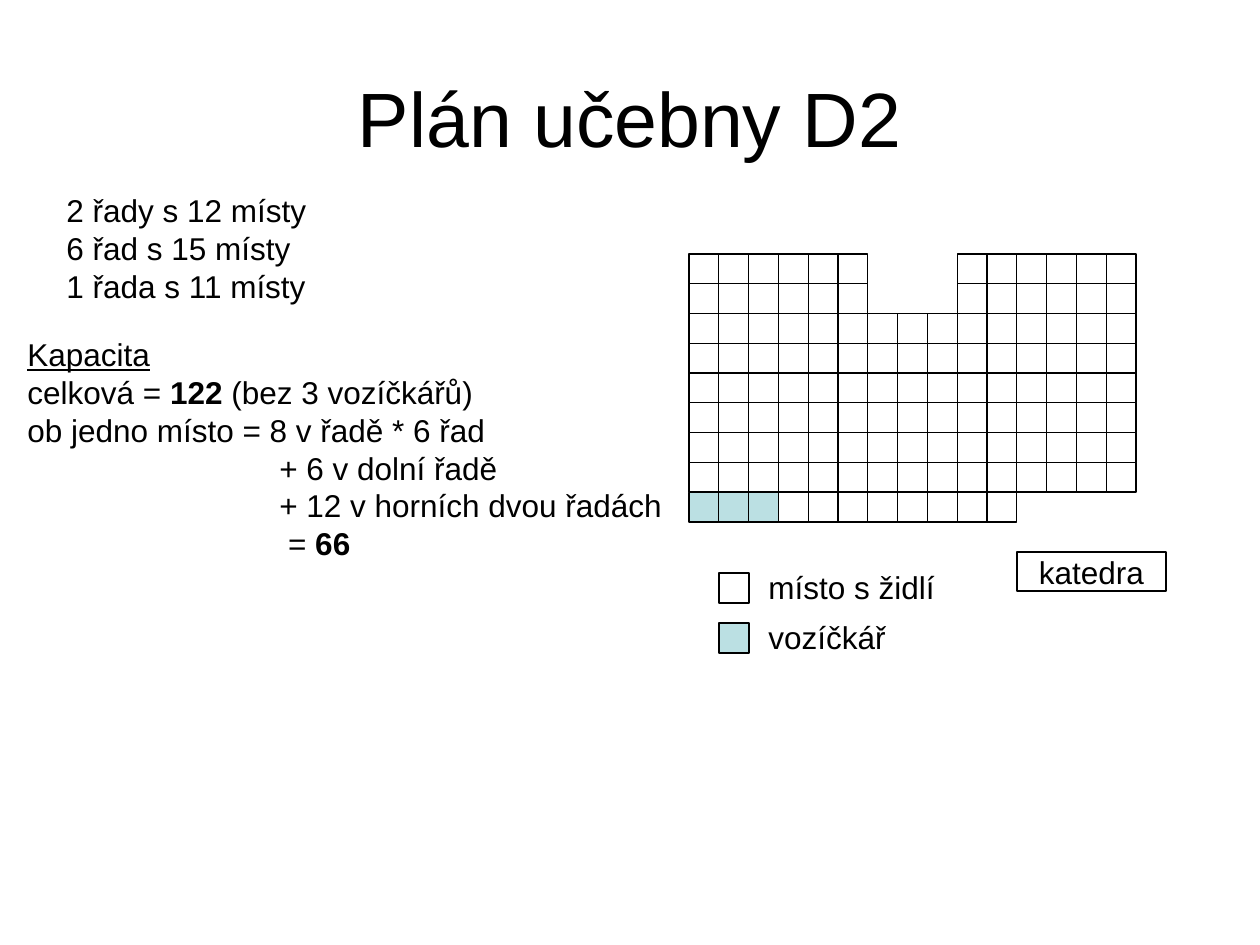
from lxml.etree import SubElement
from pptx import Presentation
from pptx.dml.color import RGBColor
from pptx.enum.shapes import MSO_SHAPE
from pptx.enum.text import MSO_ANCHOR, MSO_AUTO_SIZE, PP_ALIGN
from pptx.oxml.ns import qn
from pptx.util import Emu, Pt

PX = 914400 / 126
COLORS = {"ink": "000000", "chair": None, "wheel": "BBE0E3"}
FONT = "Arial"
COLS = 15
# Runs of places in each row: (first column, count, kind)
ROWS = (
    [[(0, 6, "chair"), (9, 6, "chair")]] * 2
    + [[(0, COLS, "chair")]] * 6
    + [[(0, 3, "wheel"), (3, 8, "chair")]]
)
BREAK = "\n"
TABS = (126, 252)


def px(*vals):
    return [Emu(round(v * PX)) for v in vals]


def add_run(para, text, size=18, bold=False, under=False):
    run = para.add_run()
    run.text = text
    font = run.font
    font.name, font.size = FONT, Pt(size)
    font.bold, font.underline = bold, under
    font.color.rgb = RGBColor.from_string(COLORS["ink"])


def set_tabs(para):
    stops = SubElement(para._p.get_or_add_pPr(), qn("a:tabLst"))
    for pos in px(*TABS):
        SubElement(stops, qn("a:tab"), pos=str(int(pos)), algn="l")


def add_text(shapes, box, paras):
    """Each paragraph is a list of BREAK marks and (text, style) runs."""
    frame = shapes.add_textbox(*px(*box)).text_frame
    frame.word_wrap = False
    frame.auto_size = MSO_AUTO_SIZE.SHAPE_TO_FIT_TEXT
    for i, parts in enumerate(paras):
        para = frame.add_paragraph() if i else frame.paragraphs[0]
        for part in parts:
            if part == BREAK:
                para.add_line_break()
            else:
                add_run(para, part[0], **part[1])
    return frame


def add_box(shapes, box, kind="chair"):
    shape = shapes.add_shape(MSO_SHAPE.RECTANGLE, *px(*box))
    shape.shadow.inherit = False
    if COLORS[kind]:
        shape.fill.solid()
        shape.fill.fore_color.rgb = RGBColor.from_string(COLORS[kind])
    else:
        shape.fill.background()
    shape.line.color.rgb = RGBColor.from_string(COLORS["ink"])
    shape.line.width = Pt(0.75)
    return shape


def set_title(slide, box, text):
    title = slide.shapes.title
    title.left, title.top, title.width, title.height = px(*box)
    frame = title.text_frame
    frame.vertical_anchor = MSO_ANCHOR.MIDDLE
    para = frame.paragraphs[0]
    para.alignment = PP_ALIGN.CENTER
    add_run(para, text, 44)


def add_notes(slide, box):
    """Row counts above, capacity sums below."""
    x, y = box
    add_text(slide.shapes, (x + 39, y, 275, 127), [
        [("2 řady s 12 místy", {}), BREAK, ("6 řad s 15 místy", {})],
        [("1 řada s 11 místy", {})],
    ])
    sums = add_text(slide.shapes, (x, y + 144, 667, 242), [
        [("Kapacita", {"under": True}), BREAK,
         ("celková = ", {}), ("122 ", {"bold": True}),
         ("(bez 3 vozíčkářů)", {})],
        [("ob jedno místo = 8 v řadě * 6 řad ", {}), BREAK,
         ("\t\t+ 6 v dolní řadě", {}), BREAK,
         ("\t\t+ 12 v horních dvou řadách", {}), BREAK,
         ("\t\t = ", {}), ("66", {"bold": True})],
    ])
    set_tabs(sums.paragraphs[1])


def add_seats(shapes, box):
    x, y, w, h = box
    cw, ch = w / COLS, h / len(ROWS)
    for row, spans in enumerate(ROWS):
        for first, count, kind in spans:
            for col in range(first, first + count):
                add_box(shapes, (x + col * cw, y + row * ch, cw, ch), kind)


def add_desk(shapes, box):
    frame = add_box(shapes, box).text_frame
    frame.word_wrap = False
    frame.vertical_anchor = MSO_ANCHOR.MIDDLE
    para = frame.paragraphs[0]
    para.alignment = PP_ALIGN.CENTER
    add_run(para, "katedra")


def add_legend(shapes, box):
    x, y = box
    items = [("chair", "místo s židlí", 194), ("wheel", "vozíčkář", 148)]
    for i, (kind, label, width) in enumerate(items):
        top = y + i * 50
        add_box(shapes, (x, top + 11, 30, 30), kind)
        add_text(shapes, (x + 37, top, width, 50), [[(label, {})]])


def main():
    prs = Presentation()
    prs.slide_width, prs.slide_height = px(1260, 945)
    slide = prs.slides.add_slide(prs.slide_layouts[5])
    set_title(slide, (63, 38, 1134, 158), "Plán učebny D2")
    add_notes(slide, (15, 185))
    plan = slide.shapes.add_group_shape().shapes
    add_desk(plan, (1017, 552, 149, 39))
    add_legend(plan, (719, 562))
    add_seats(plan, (689, 254, 447, 268))
    prs.save("out.pptx")


if __name__ == "__main__":
    main()
